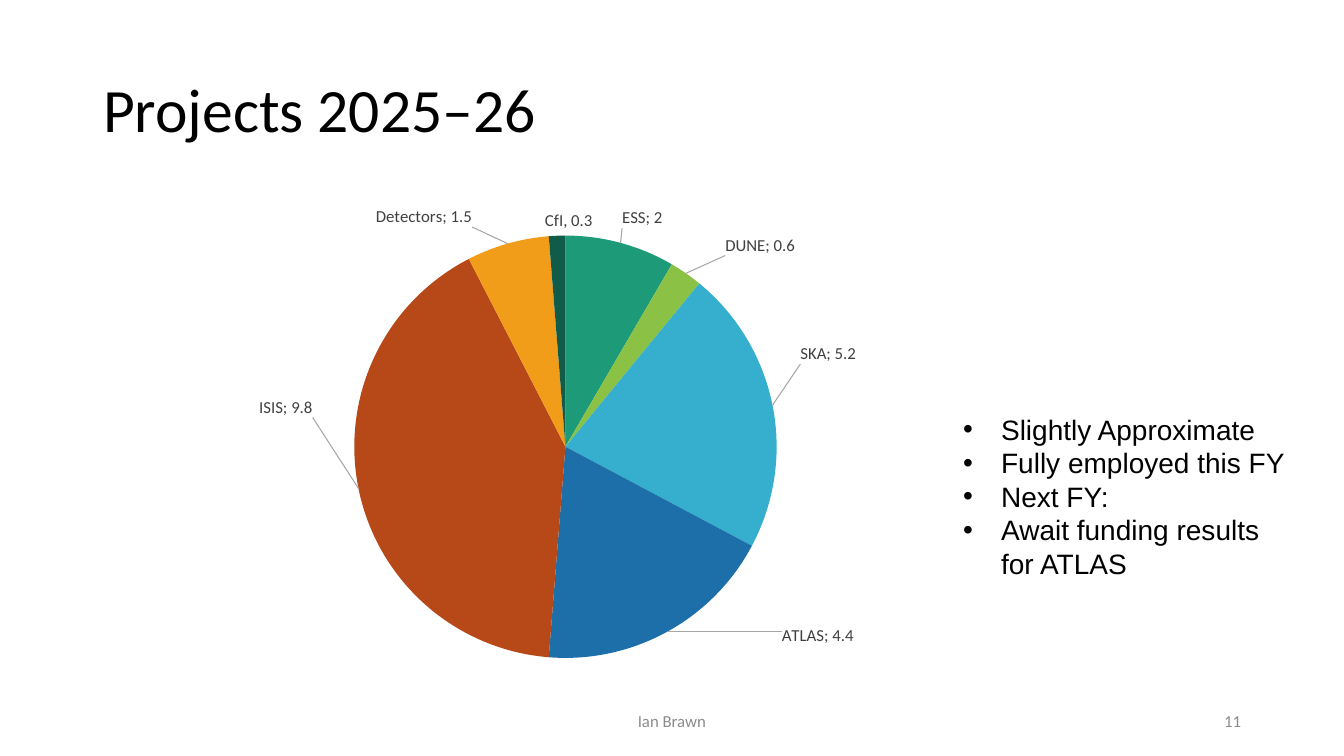
"""Build the Projects 2025–26 slide with a labelled pie chart."""
from lxml import etree
from pptx import Presentation
from pptx.chart.data import CategoryChartData
from pptx.dml.color import RGBColor
from pptx.enum.chart import XL_CHART_TYPE
from pptx.enum.text import MSO_ANCHOR, MSO_AUTO_SIZE, PP_ALIGN
from pptx.oxml import parse_xml
from pptx.oxml.ns import nsdecls, qn
from pptx.util import Pt

PIE = XL_CHART_TYPE.PIE
MIDDLE, TOP = MSO_ANCHOR.MIDDLE, MSO_ANCHOR.TOP
LEFT, CENTER, RIGHT = PP_ALIGN.LEFT, PP_ALIGN.CENTER, PP_ALIGN.RIGHT
FIT_SHAPE = MSO_AUTO_SIZE.SHAPE_TO_FIT_TEXT

EMU_PER_PX = 914400 / 100.8
BLACK = RGBColor(0x00, 0x00, 0x00)
FOOTER_GRAY = RGBColor(0x8C, 0x8C, 0x8C)
LABEL_GRAY = RGBColor(0x40, 0x40, 0x40)
LEADER_GRAY = RGBColor(0xA6, 0xA6, 0xA6)
GREEN = RGBColor(0x1D, 0x9A, 0x78)
LIME = RGBColor(0x8B, 0xC1, 0x45)
SKY = RGBColor(0x36, 0xAF, 0xCE)
BLUE = RGBColor(0x1D, 0x6F, 0xA9)
RUST = RGBColor(0xB7, 0x49, 0x19)
ORANGE = RGBColor(0xF1, 0x9D, 0x19)
DARK_GREEN = RGBColor(0x11, 0x5C, 0x48)

CHART_BOX = (6, 202, 1108, 480)
PLOT_AREA = {"x": 0.05, "y": 0.07, "w": 0.91, "h": 0.88}
PROJECTS = [
    ("ESS", 2, GREEN, (0, -9)),
    ("DUNE", 0.6, LIME, (36, -13)),
    ("SKA", 5.2, SKY, (22, -40)),
    ("ATLAS", 4.4, BLUE, (112, -11)),
    ("ISIS", 9.8, RUST, (-40, -92)),
    ("Detectors", 1.5, ORANGE, (-34, -11)),
    ("CfI", 0.3, DARK_GREEN, (12, 1)),
]
CUSTOM_LABELS = {"CfI": "CfI, 0.3"}
NOTES = [
    "Slightly Approximate",
    "Fully employed this FY",
    "Next FY:",
    "Await funding results for ATLAS",
]


def px(length):
    """Turn pixels into EMU."""
    return round(length * EMU_PER_PX)


def place(shape, box):
    """Move and size a shape."""
    shape.left, shape.top, shape.width, shape.height = map(px, box)


def style_font(font, name, size, color):
    """Set the name, size and colour of a font."""
    font.name, font.size, font.color.rgb = name, Pt(size), color


def set_title(slide, text):
    """Fill the title placeholder."""
    title = slide.shapes.title
    place(title, (93, 40, 1159, 146))
    title.text_frame.text = text
    title.text_frame.vertical_anchor = MIDDLE
    paragraph = title.text_frame.paragraphs[0]
    paragraph.alignment, paragraph.line_spacing = LEFT, 0.9
    style_font(paragraph.font, "Calibri", 44, BLACK)


def set_bullets(slide, lines):
    """Fill the body placeholder with a bulleted list."""
    body = slide.placeholders[1]
    place(body, (953, 407, 351, 179))
    frame = body.text_frame
    frame.text = "\n".join(lines)
    frame.vertical_anchor, frame.auto_size = TOP, FIT_SHAPE
    for paragraph in frame.paragraphs:
        properties = paragraph._p.get_or_add_pPr()
        properties.set("marL", str(px(38)))
        properties.set("indent", str(px(-38)))
        font = etree.SubElement(properties, qn("a:buFont"))
        font.set("typeface", "Arial")
        etree.SubElement(properties, qn("a:buChar")).set("char", "•")
        paragraph.space_before = Pt(0)
        style_font(paragraph.font, "Arial", 20, BLACK)


def add_footer(slide, text, box, alignment):
    """Add a small grey text at the foot of the slide."""
    frame = slide.shapes.add_textbox(*map(px, box)).text_frame
    frame.word_wrap, frame.vertical_anchor = True, MIDDLE
    frame.text = text
    paragraph = frame.paragraphs[0]
    paragraph.alignment = alignment
    style_font(paragraph.font, "Calibri", 12, FOOTER_GRAY)


def manual_layout(values, target=""):
    """Return the XML of a manual layout."""
    modes = "".join(f'<c:{axis}Mode val="edge"/>' for axis in "xy") if target else ""
    sides = "".join(f'<c:{side} val="{value:.4f}"/>' for side, value in values.items())
    return f"<c:layout><c:manualLayout>{target}{modes}{sides}</c:manualLayout></c:layout>"


def label_xml(index, name, offset):
    """Return the XML of one slice label, shifted by an offset."""
    layout = manual_layout({"x": offset[0] / CHART_BOX[2], "y": offset[1] / CHART_BOX[3]})
    text = ""
    if name in CUSTOM_LABELS:
        text = (f"<c:tx><c:rich><a:bodyPr/><a:p><a:r><a:t>{CUSTOM_LABELS[name]}"
                "</a:t></a:r></a:p></c:rich></c:tx>")
    return (f'<c:dLbl><c:idx val="{index}"/>{layout}{text}<c:dLblPos val="outEnd"/>'
            '<c:showLegendKey val="0"/><c:showVal val="1"/><c:showCatName val="1"/>'
            '<c:showSerName val="0"/><c:showPercent val="0"/><c:showBubbleSize val="0"/>'
            "<c:separator>; </c:separator></c:dLbl>")


def add_labels(plot):
    """Label the slices outside the pie, with leader lines."""
    plot.has_data_labels = False
    series = plot.series[0]
    labels = series.data_labels
    style_font(labels.font, "Calibri", 12, LABEL_GRAY)
    labels.show_value = labels.show_category_name = True
    element = labels._element
    for index, (name, _, _, offset) in enumerate(PROJECTS):
        label = label_xml(index, name, offset)
        element.insert(index, parse_xml(label.replace(
            "<c:dLbl>", f'<c:dLbl {nsdecls("c", "a")}>', 1)))
        if name in CUSTOM_LABELS:
            frame = series.points[index].data_label.text_frame
            style_font(frame.paragraphs[0].runs[0].font, "Calibri", 12, LABEL_GRAY)
    for old in element.findall(qn("c:showLeaderLines")):
        element.remove(old)
    etree.SubElement(element, qn("c:showLeaderLines")).set("val", "1")
    element.append(parse_xml(
        f'<c:leaderLines {nsdecls("c", "a")}><c:spPr><a:ln w="9525"><a:solidFill>'
        f'<a:srgbClr val="{LEADER_GRAY}"/></a:solidFill></a:ln></c:spPr></c:leaderLines>'))


def add_pie(slide):
    """Add the pie chart of projects."""
    data = CategoryChartData()
    data.categories = [project[0] for project in PROJECTS]
    data.add_series("Series 1", [project[1] for project in PROJECTS])
    chart = slide.shapes.add_chart(PIE, *map(px, CHART_BOX), data).chart
    chart.has_legend = chart.has_title = False
    style_font(chart.font, "Calibri", 10, BLACK)
    plot = chart.plots[0]
    plot.vary_by_categories = True
    for index, (_, _, color, _) in enumerate(PROJECTS):
        fill = plot.series[0].points[index].format.fill
        fill.solid()
        fill.fore_color.rgb = color
    add_labels(plot)
    area = chart._chartSpace.chart.plotArea
    for old in area.findall(qn("c:layout")):
        area.remove(old)
    layout = manual_layout(PLOT_AREA, '<c:layoutTarget val="inner"/>')
    area.insert(0, parse_xml(layout.replace("<c:layout>", f'<c:layout {nsdecls("c")}>', 1)))


def main():
    """Build and save the slide."""
    presentation = Presentation()
    presentation.slide_width, presentation.slide_height = px(1344), px(756)
    slide = presentation.slides.add_slide(presentation.slide_layouts[1])
    set_title(slide, "Projects 2025–26")
    add_pie(slide)
    add_footer(slide, "Ian Brawn", (445, 701, 454, 40), CENTER)
    add_footer(slide, "11", (949, 701, 302, 40), RIGHT)
    set_bullets(slide, NOTES)
    presentation.save("out.pptx")


if __name__ == "__main__":
    main()
